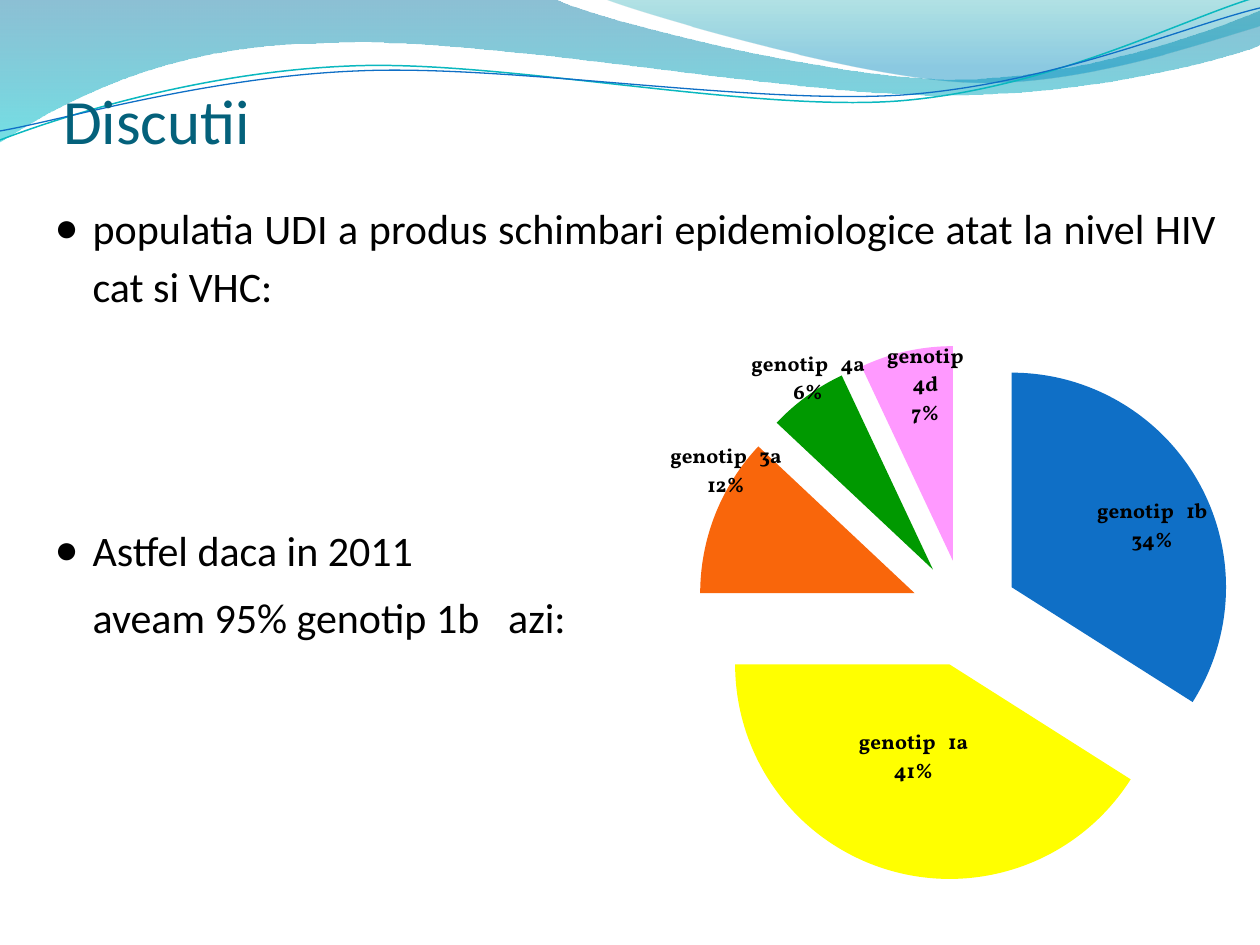
from copy import deepcopy
from dataclasses import dataclass

from lxml import etree
from pptx import Presentation
from pptx.chart.data import CategoryChartData
from pptx.dml.color import RGBColor
from pptx.enum.chart import XL_CHART_TYPE, XL_LABEL_POSITION
from pptx.enum.text import MSO_ANCHOR, PP_ALIGN
from pptx.oxml import parse_xml
from pptx.oxml.ns import nsdecls, qn
from pptx.util import Pt

PIE = XL_CHART_TYPE.PIE
LABEL_CENTER = XL_LABEL_POSITION.CENTER
BOTTOM, TOP = MSO_ANCHOR.BOTTOM, MSO_ANCHOR.TOP
LEFT, JUSTIFY = PP_ALIGN.LEFT, PP_ALIGN.JUSTIFY

EMU_PER_PX = 914400 / 126
CHART_BOX = (581, 273, 679, 654)
PIE_FRAME = {"x": 0.16, "y": 0.11, "w": 0.81, "h": 0.82}
COLORS = {
    "title": "04617B", "text": "000000",
    "wave_top": "0074A1", "wave_bottom": "00C6CF",
    "crest_top": "00A1A9", "crest_bottom": "008BBF",
    "teal_line": "0AB8BF", "blue_line": "0F6FC6",
    "1b": "0F6FC6", "1a": "FFFF00", "3a": "F9660B", "4a": "009900", "4d": "FF99FF",
}


@dataclass
class Stop:
    position: float
    color: str
    alpha: int


@dataclass
class Wave:
    """A start point, then lines (2 numbers) and Bezier curves (6 numbers), in px."""
    start: tuple
    segments: list
    stops: tuple = ()
    line: str = ""
    line_pt: float = 0


@dataclass
class Genotype:
    name: str
    percent: int
    label_shift: tuple
    label_lines: str = ""


@dataclass
class Bullet:
    text: str
    space_before: int
    marked: bool = True
    spaced_word: str = ""


WAVES = [
    Wave((0, -1), [(554, -1), (600, 21, 837, 79, 955, 79), (1075, 79, 1207, 33, 1260, 11),
                   (1261, 45), (1239, 55, 1096, 96, 940, 95), (783, 95, 481, 35, 324, 43),
                   (163, 44, 58, 105, -1, 142)],
         stops=(Stop(0, "wave_top", 45), Stop(1, "wave_bottom", 55))),
    Wave((604, -1), [(641, 14, 859, 78, 969, 82), (1079, 87, 1211, 40, 1260, 26), (1260, 0)],
         stops=(Stop(0, "crest_top", 30), Stop(0.8, "crest_bottom", 45))),
    Wave((0, 140), [(60, 117, 199, 72, 349, 66), (498, 59, 747, 112, 898, 101),
                    (1050, 89, 1182, 19, 1257, -3)], line="teal_line", line_pt=0.85),
    Wave((0, 131), [(59, 121, 207, 77, 357, 71), (508, 64, 752, 105, 903, 95),
                    (1053, 84, 1185, 26, 1260, 8)], line="blue_line", line_pt=0.75),
]
GENOTYPES = [
    Genotype("1b", 34, (47, -8)),
    Genotype("1a", 41, (-6, -9)),
    Genotype("3a", 12, (-89, -81)),
    Genotype("4a", 6, (-62, -103)),
    Genotype("4d", 7, (-4, -69), label_lines="genotip\n4d\n7%"),
]
BULLETS = [
    Bullet("populatia UDI a produs schimbari epidemiologice atat la nivel HIV cat si VHC:", 0),
    Bullet("Astfel daca in 2011", 118),
    Bullet("aveam 95% genotip 1b", 5, marked=False, spaced_word="azi:"),
]


def px(length: float) -> int:
    return round(length * EMU_PER_PX)


def rgb(name: str) -> RGBColor:
    return RGBColor.from_string(COLORS[name])


def place(shape, left: int, top: int, width: int, height: int) -> None:
    shape.left, shape.top, shape.width, shape.height = map(px, (left, top, width, height))


def bend_segments(shape, wave: Wave) -> None:
    """Turn the straight segments that have control points into Bezier curves."""
    lines = list(shape.element.spPr.iter(qn("a:lnTo")))
    for line, segment in zip(lines, wave.segments):
        if len(segment) == 6:
            curve = etree.Element(qn("a:cubicBezTo"))
            for x, y in zip(segment[::2], segment[1::2]):
                point = etree.SubElement(curve, qn("a:pt"))
                point.set("x", str(px(x) - shape.left))
                point.set("y", str(px(y) - shape.top))
            line.getparent().replace(line, curve)


def draw_wave(slide, wave: Wave) -> None:
    builder = slide.shapes.build_freeform(*map(px, wave.start))
    ends = [tuple(map(px, segment[-2:])) for segment in wave.segments]
    builder.add_line_segments(ends, close=False)
    shape = builder.convert_to_shape()
    bend_segments(shape, wave)
    shape.shadow.inherit = False
    if wave.stops:
        etree.SubElement(next(shape.element.spPr.iter(qn("a:path"))), qn("a:close"))
        shape.line.fill.background()
        shape.fill.gradient()
        shape.fill.gradient_angle = 270
        for target, stop in zip(shape.fill.gradient_stops, wave.stops):
            target.position = stop.position
            target.color.rgb = rgb(stop.color)
        for color, stop in zip(shape.element.spPr.iter(qn("a:srgbClr")), wave.stops):
            etree.SubElement(color, qn("a:alpha")).set("val", str(stop.alpha * 1000))
    else:
        shape.fill.background()
        shape.line.color.rgb = rgb(wave.line)
        shape.line.width = Pt(wave.line_pt)
    slide.shapes.title.element.addprevious(shape.element)


def set_font(font, size: int, color: str, name: str = "Calibri") -> None:
    font.name, font.size, font.color.rgb = name, Pt(size), rgb(color)


def write_title(title) -> None:
    place(title, 63, 0, 1134, 157)
    frame = title.text_frame
    frame.text = "Discutii"
    frame.vertical_anchor = BOTTOM
    frame.margin_left = frame.margin_right = frame.margin_bottom = 0
    frame.paragraphs[0].alignment = LEFT
    set_font(frame.paragraphs[0].font, 36, "title")


def write_bullets(body) -> None:
    place(body, 42, 189, 1187, 683)
    frame = body.text_frame
    frame.vertical_anchor = TOP
    frame.text = "\n".join(bullet.text for bullet in BULLETS)
    for paragraph, bullet in zip(frame.paragraphs, BULLETS):
        if bullet.spaced_word:
            gap = paragraph.add_run()
            gap.text = " "
            gap.font._element.set("spc", "1090")
            paragraph.add_run().text = bullet.spaced_word
        paragraph.alignment = JUSTIFY
        paragraph.line_spacing = Pt(33)
        paragraph.space_before = Pt(bullet.space_before)
        set_font(paragraph.font, 24, "text")
        properties = paragraph._p.get_or_add_pPr()
        properties.set("marL", str(px(38)))
        properties.set("indent", str(px(-38 if bullet.marked else 0)))
        marks = ([f'<a:buClr {nsdecls("a")}><a:srgbClr val="{COLORS["text"]}"/></a:buClr>',
                  f'<a:buSzPct {nsdecls("a")} val="95000"/>',
                  f'<a:buChar {nsdecls("a")} char="●"/>']
                 if bullet.marked else [f'<a:buNone {nsdecls("a")}/>'])
        for mark in marks:
            properties.find(qn("a:defRPr")).addprevious(parse_xml(mark))


def manual_layout(content: str):
    return parse_xml(f'<c:layout {nsdecls("c")}><c:manualLayout>{content}'
                     '</c:manualLayout></c:layout>')


def format_labels(series) -> None:
    """Show category over percent, each label shifted from its slice centre."""
    labels = series.data_labels
    set_font(labels.font, 12, "text", "Vollkorn")
    labels.font.bold = True
    labels.show_value = False
    labels.show_category_name = labels.show_percentage = True
    labels.position = LABEL_CENTER
    group = series._element.find(qn("c:dLbls"))
    separator = parse_xml(f'<c:separator {nsdecls("c")}>\n</c:separator>')
    group.find(qn("c:showBubbleSize")).addnext(separator)
    for leader in group.findall(qn("c:showLeaderLines")):
        leader.set("val", "0")
    shared = [item for item in group if item.tag != qn("c:showLeaderLines")]
    for index, genotype in enumerate(GENOTYPES):
        dx, dy = genotype.label_shift
        label = parse_xml(f'<c:dLbl {nsdecls("c")}><c:idx val="{index}"/></c:dLbl>')
        label.append(manual_layout(f'<c:x val="{dx / CHART_BOX[2]:.3f}"/>'
                                   f'<c:y val="{dy / CHART_BOX[3]:.3f}"/>'))
        label.extend(deepcopy(item) for item in shared)
        group.insert(index, label)
        if genotype.label_lines:
            frame = series.points[index].data_label.text_frame
            frame.text = genotype.label_lines
            for paragraph in frame.paragraphs:
                set_font(paragraph.runs[0].font, 12, "text", "Vollkorn")
                paragraph.runs[0].font.bold = True


def draw_genotype_pie(slide) -> None:
    data = CategoryChartData()
    data.categories = [f"genotip   {genotype.name}" for genotype in GENOTYPES]
    data.add_series("Series 1", [genotype.percent for genotype in GENOTYPES])
    chart = slide.shapes.add_chart(PIE, *map(px, CHART_BOX), data).chart
    chart.has_legend = chart.has_title = False
    set_font(chart.font, 10, "text", "Vollkorn")
    plot = chart.plots[0]
    plot.vary_by_categories = True
    series = plot.series[0]
    for index, genotype in enumerate(GENOTYPES):
        fill = series.points[index].format.fill
        fill.solid()
        fill.fore_color.rgb = rgb(genotype.name)
    series._element.find(qn("c:dPt")).addprevious(
        parse_xml(f'<c:explosion {nsdecls("c")} val="25"/>'))
    format_labels(series)
    area = chart._chartSpace.chart.plotArea
    for layout in area.findall(qn("c:layout")):
        area.remove(layout)
    sides = "".join(f'<c:{side} val="{value}"/>' for side, value in PIE_FRAME.items())
    area.insert(0, manual_layout('<c:layoutTarget val="inner"/><c:xMode val="edge"/>'
                                 f'<c:yMode val="edge"/>{sides}'))


def main() -> None:
    deck = Presentation()
    deck.slide_width, deck.slide_height = px(1260), px(945)
    slide = deck.slides.add_slide(deck.slide_layouts[1])
    for wave in WAVES:
        draw_wave(slide, wave)
    write_title(slide.shapes.title)
    write_bullets(slide.placeholders[1])
    draw_genotype_pie(slide)
    deck.save("out.pptx")


if __name__ == "__main__":
    main()
